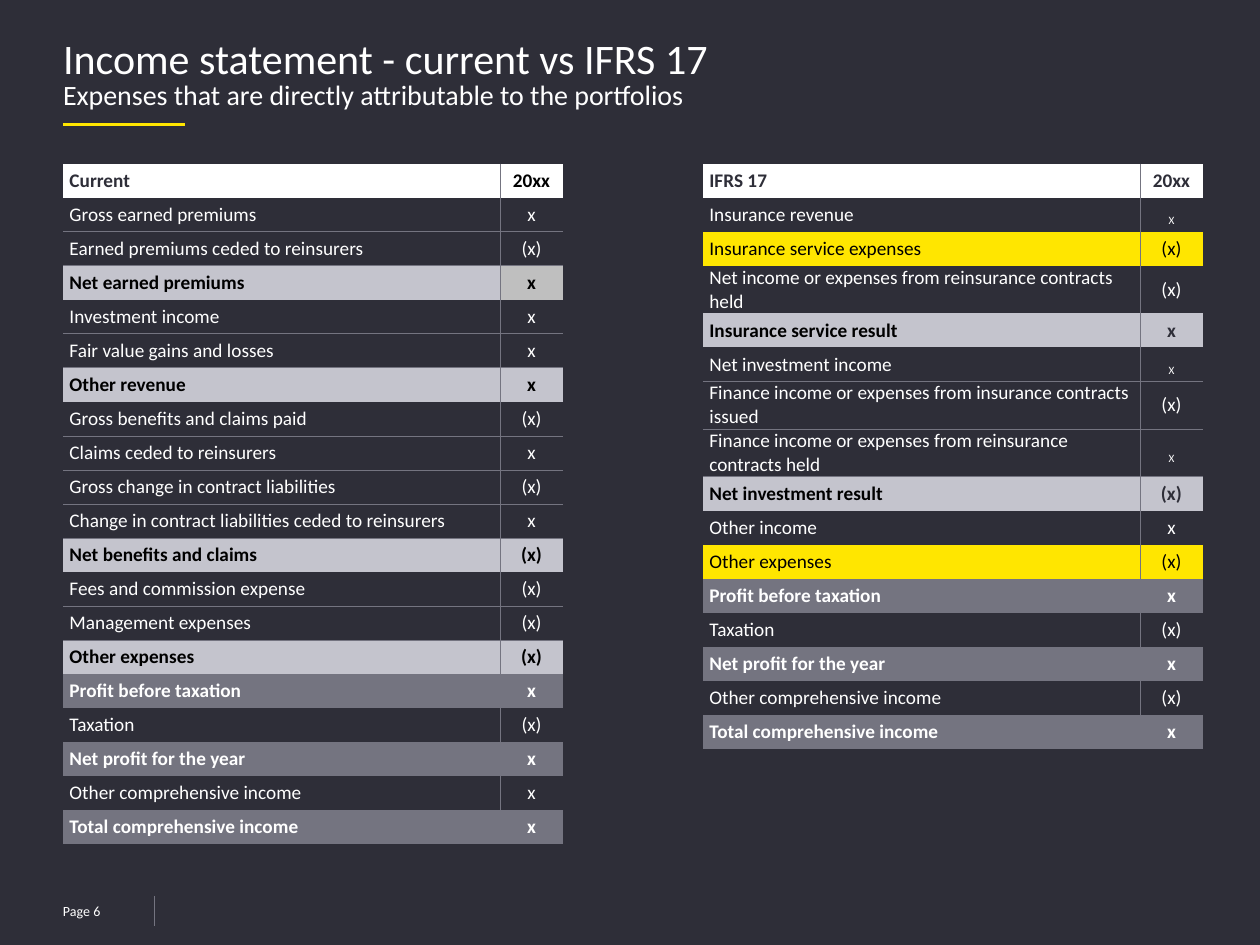
from lxml.etree import SubElement
from pptx import Presentation
from pptx.dml.color import RGBColor
from pptx.enum.shapes import MSO_CONNECTOR
from pptx.enum.text import MSO_ANCHOR, MSO_AUTO_SIZE, PP_ALIGN
from pptx.oxml.ns import qn
from pptx.util import Cm, Pt

DARK = RGBColor(0x2E, 0x2E, 0x38)
WHITE = RGBColor(0xFF, 0xFF, 0xFF)
BLACK = RGBColor(0, 0, 0)
YELLOW = RGBColor(0xFF, 0xE6, 0x00)
GREY = RGBColor(0x74, 0x74, 0x80)
LIGHT = RGBColor(0xC4, 0xC4, 0xCD)
SILVER = RGBColor(0xBF, 0xBF, 0xBF)

FONT = "Calibri"
NO_GRID_STYLE = "{2D5ABB26-0587-4C30-8999-92F81FD0307C}"
LEFT = Cm(1.27)
TABLE_TOP = Cm(3.3)
COL_WIDTHS = (Cm(8.81), Cm(1.27))
ROW_HEIGHT = Cm(13.72) // 20

# Row kind: fill, label colour, bold
STYLES = {
    "head": (WHITE, DARK, True),
    "item": (None, WHITE, False),
    "mark": (YELLOW, BLACK, False),
    "sub": (LIGHT, BLACK, True),
    "total": (GREY, WHITE, True),
}

CLOSING_ROWS = ("Profit before taxation", "Taxation", "Net profit for the year",
                "Other comprehensive income", "Total comprehensive income")

CURRENT = [
    ("head", "Current", "20xx"),
    ("item", "Gross earned premiums", "x"),
    ("item", "Earned premiums ceded to reinsurers", "(x)"),
    ("sub", "Net earned premiums", "x"),
    ("item", "Investment income", "x"),
    ("item", "Fair value gains and losses", "x"),
    ("sub", "Other revenue", "x"),
    ("item", "Gross benefits and claims paid", "(x)"),
    ("item", "Claims ceded to reinsurers", "x"),
    ("item", "Gross change in contract liabilities", "(x)"),
    ("item", "Change in contract liabilities ceded to reinsurers", "x"),
    ("sub", "Net benefits and claims", "(x)"),
    ("item", "Fees and commission expense", "(x)"),
    ("item", "Management expenses", "(x)"),
    ("sub", "Other expenses", "(x)"),
]

IFRS_17 = [
    ("head", "IFRS 17", "20xx"),
    ("item", "Insurance revenue", "X"),
    ("mark", "Insurance service expenses", "(x)"),
    ("item", "Net income or expenses from reinsurance contracts held", "(x)"),
    ("sub", "Insurance service result", "x"),
    ("item", "Net investment income", "X"),
    ("item", "Finance income or expenses from insurance contracts issued", "(x)"),
    ("item", "Finance income or expenses from reinsurance contracts held", "X"),
    ("sub", "Net investment result", "(x)"),
    ("item", "Other income", "x"),
    ("mark", "Other expenses", "(x)"),
]


def closing_rows(values):
    kinds = ("total", "item", "total", "item", "total")
    return list(zip(kinds, CLOSING_ROWS, values))


def add_run(p, text, size, color=WHITE, bold=False):
    r = p.add_run()
    r.text = text
    font_format = {"name": FONT, "size": Pt(size), "bold": bold}
    for name, value in font_format.items():
        setattr(r.font, name, value)
    r.font.color.rgb = color
    return r


def set_frame(tf, anchor):
    frame_format = {"margin_left": 0, "margin_right": 0, "margin_top": 0,
                    "margin_bottom": 0, "word_wrap": True,
                    "auto_size": MSO_AUTO_SIZE.NONE, "vertical_anchor": anchor}
    for name, value in frame_format.items():
        setattr(tf, name, value)


def add_title(s, title, subtitle):
    sp = s.shapes.title
    sp.left, sp.top, sp.width, sp.height = LEFT, Cm(0.81), Cm(22.86), Cm(1.65)
    set_frame(sp.text_frame, MSO_ANCHOR.TOP)
    p = sp.text_frame.paragraphs[0]
    p.alignment, p.line_spacing = PP_ALIGN.LEFT, 0.85
    add_run(p, title, 24)
    p.add_line_break()
    add_run(p, subtitle, 16)


def add_line(s, x1, y1, x2, y2, color, width):
    line = s.shapes.add_connector(MSO_CONNECTOR.STRAIGHT, x1, y1, x2, y2)
    line.line.color.rgb = color
    line.line.width = Pt(width)
    SubElement(line._element.spPr, qn("a:effectLst"))


def add_page_number(s, text):
    sp = s.shapes.add_textbox(LEFT, Cm(18.11), Cm(1.85), Cm(0.51))
    set_frame(sp.text_frame, MSO_ANCHOR.MIDDLE)
    add_run(sp.text_frame.paragraphs[0], text, 8)


def add_borders(cell, sides):
    """Draw thin grey borders; sides must follow the order L, R, T, B."""
    tc_pr = cell._tc.get_or_add_tcPr()
    for side in sides:
        ln = SubElement(tc_pr, qn(f"a:ln{side}"), w=str(Pt(0.5)))
        fill = SubElement(ln, qn("a:solidFill"))
        SubElement(fill, qn("a:srgbClr"), val=str(GREY))


def fill_cell(cell, text, fill, color, bold, is_value):
    cell_format = {"margin_left": 0 if is_value else Cm(0.13), "margin_right": 0,
                   "margin_top": 0, "margin_bottom": 0,
                   "vertical_anchor": MSO_ANCHOR.MIDDLE}
    for name, value in cell_format.items():
        setattr(cell, name, value)
    if fill is None:
        cell.fill.background()
    else:
        cell.fill.solid()
        cell.fill.fore_color.rgb = fill
    p = cell.text_frame.paragraphs[0]
    p.alignment = PP_ALIGN.CENTER if is_value else PP_ALIGN.LEFT
    r = add_run(p, text, 11, color, bold)
    if text == "X":
        r.font._element.set("baseline", "-25000")


def add_statement(s, left, rows, value_color):
    """Add a statement table; value_color is for header and subtotal values."""
    frame = s.shapes.add_table(len(rows), 2, left, TABLE_TOP,
                               sum(COL_WIDTHS), ROW_HEIGHT * len(rows))
    table = frame.table
    table.first_row = table.horz_banding = False
    table._tbl.tblPr.find(qn("a:tableStyleId")).text = NO_GRID_STYLE
    for column, width in zip(table.columns, COL_WIDTHS):
        column.width = width
    kinds = [row[0] for row in rows] + [None]
    for i, (kind, label, value) in enumerate(rows):
        table.rows[i].height = ROW_HEIGHT
        fill, color, bold = STYLES[kind]
        rules = ""
        if kind == "item":
            rules += "T" if kinds[i - 1] == "item" else ""
            rules += "B" if kinds[i + 1] == "item" else ""
        for j, text in enumerate((label, value)):
            cell = table.cell(i, j)
            add_borders(cell, "RL"[j] + rules)
            text_color = value_color if j and kind in ("head", "sub") else color
            fill_cell(cell, text, fill, text_color, bold, j == 1)
    return table


def main():
    prs = Presentation()
    prs.slide_width, prs.slide_height = Cm(25.4), Cm(19.05)
    s = prs.slides.add_slide(prs.slide_layouts[5])
    s.background.fill.solid()
    s.background.fill.fore_color.rgb = DARK

    add_line(s, LEFT, Cm(2.51), Cm(3.73), Cm(2.51), YELLOW, 2.25)
    add_title(s, "Income statement - current vs IFRS 17",
              "Expenses that are directly attributable to the portfolios")
    add_page_number(s, "Page 6")
    add_line(s, Cm(3.12), Cm(18.06), Cm(3.12), Cm(18.67), GREY, 0.75)

    current = add_statement(
        s, LEFT, CURRENT + closing_rows(("x", "(x)", "x", "x", "x")), BLACK)
    current.cell(3, 1).fill.fore_color.rgb = SILVER
    add_statement(
        s, Cm(14.17), IFRS_17 + closing_rows(("x", "(x)", "x", "(x)", "x")), DARK)
    prs.save("out.pptx")


if __name__ == "__main__":
    main()
